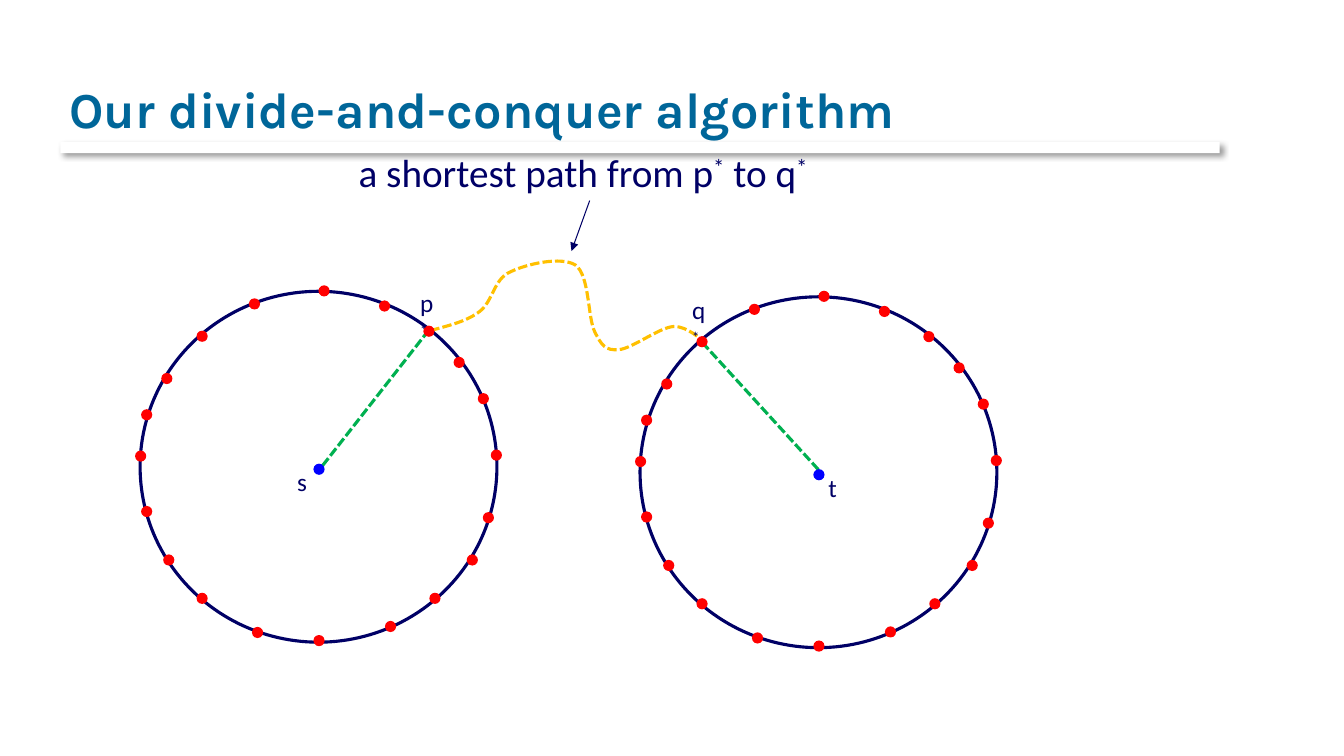
import pptx
import pptx.util
import pptx.dml.color
import pptx.enum.dml
import pptx.enum.shapes
import pptx.enum.text
import pptx.oxml
import pptx.oxml.ns

Pt = pptx.util.Pt
RGBColor = pptx.dml.color.RGBColor
NAVY = RGBColor(0x00, 0x00, 0x66)
TEAL = RGBColor(0x00, 0x66, 0x99)
RED = RGBColor(0xFF, 0x00, 0x00)
BLUE = RGBColor(0x00, 0x00, 0xFF)
GREEN = RGBColor(0x00, 0xB0, 0x50)
AMBER = RGBColor(0xFF, 0xC0, 0x00)
WHITE = RGBColor(0xFF, 0xFF, 0xFF)
DASH = pptx.enum.dml.MSO_LINE.SQUARE_DOT
OVAL = pptx.enum.shapes.MSO_SHAPE.OVAL
NAMESPACE = pptx.oxml.ns.nsdecls("a")
DOT_SIZE = 8

presentation = pptx.Presentation()
presentation.slide_width = Pt(960)
presentation.slide_height = Pt(540)
slide = presentation.slides.add_slide(presentation.slide_layouts[6])
shapes = slide.shapes


def add_line(start, end, color, width):
    line = shapes.add_connector(
        pptx.enum.shapes.MSO_CONNECTOR.STRAIGHT, *map(Pt, start + end)
    )
    line.line.color.rgb = color
    line.line.width = Pt(width)
    line._element.spPr.append(pptx.oxml.parse_xml(f"<a:effectLst {NAMESPACE}/>"))
    return line


def add_filled(kind, left, top, width, height, color):
    shape = shapes.add_shape(kind, Pt(left), Pt(top), Pt(width), Pt(height))
    shape.shadow.inherit = False
    shape.fill.solid()
    shape.fill.fore_color.rgb = color
    shape.line.fill.background()
    return shape


rule = add_filled(pptx.enum.shapes.MSO_SHAPE.RECTANGLE, 43.2, 101.5, 828, 7.9, WHITE)
effects = rule._element.spPr.find(pptx.oxml.ns.qn("a:effectLst"))
effects.append(pptx.oxml.parse_xml(
    f'<a:outerShdw {NAMESPACE} blurRad="50800" dist="38100" dir="2700000" '
    'algn="tl" rotWithShape="0"><a:srgbClr val="000000"><a:alpha val="40000"/>'
    "</a:srgbClr></a:outerShdw>"
))

for start, end in [((230.4, 332.6), (303.8, 239)), ((584.6, 335.5), (501.8, 244.8))]:
    radius = add_line(start, end, GREEN, 2.25)
    radius.line.dash_style = DASH

path_points = [
    (307.4, 236.2),
    (320.4, 232.6), (333.4, 229.7), (342.7, 222.5),
    (352.1, 215.3), (352.8, 199.4), (364.3, 194.4),
    (375.8, 188.6), (401, 182.9), (411.1, 189.4),
    (421.2, 196.6), (419.8, 226.8), (424.8, 236.9),
    (429.8, 247), (432.7, 250.6), (442.1, 249.8),
    (451.4, 249.1), (470.9, 234), (481, 233.3),
    (491, 232.6), (502.6, 244.1), (502.6, 244.1),
]
path_emu = [(Pt(x), Pt(y)) for x, y in path_points]
builder = shapes.build_freeform(*path_emu[0])
builder.add_line_segments(path_emu[1:], close=False)
shortest_path = builder.convert_to_shape()
shortest_path.shadow.inherit = False
shortest_path.fill.background()
shortest_path.line.color.rgb = AMBER
shortest_path.line.width = Pt(2.25)
shortest_path.line.dash_style = DASH
segments = list(shortest_path._element.iter(pptx.oxml.ns.qn("a:lnTo")))
for index in range(0, len(segments), 3):
    curve = pptx.oxml.parse_xml(f"<a:cubicBezTo {NAMESPACE}/>")
    segments[index].addprevious(curve)
    for segment in segments[index:index + 3]:
        curve.append(segment[0])
        segment.getparent().remove(segment)

boundary_dots = [
    (227.5, 203.8), (270.7, 214.6), (302.4, 232.6), (324, 254.9), (341.3, 280.8),
    (350.6, 321.1), (344.9, 365.8), (333.4, 396), (306.7, 423.4), (275, 443.5),
    (223.9, 453.6), (180, 447.8), (140.4, 423.4), (116.6, 396), (100.8, 361.4),
    (96.5, 321.8), (100.8, 292.3), (115.2, 266.4), (140.4, 236.2), (177.8, 213.1),
]
for shift_x, shift_y in [(0, 0), (357.1, 3.9)]:
    circle = shapes.add_shape(
        OVAL, Pt(100.1 + shift_x), Pt(208.1 + shift_y), Pt(254.9), Pt(250.6)
    )
    circle.shadow.inherit = False
    circle.fill.background()
    circle.line.color.rgb = NAVY
    circle.line.width = Pt(2.25)
    for x, y in boundary_dots:
        add_filled(OVAL, x + shift_x, y + shift_y, DOT_SIZE, DOT_SIZE, RED)
    add_filled(OVAL, 223.9 + shift_x, 331.2 + shift_y, DOT_SIZE, DOT_SIZE, BLUE)

title = shapes.add_textbox(Pt(42.5), Pt(12.2), Pt(815.8), Pt(90))
title.text_frame.word_wrap = True
title.text_frame.vertical_anchor = pptx.enum.text.MSO_ANCHOR.BOTTOM
paragraph = title.text_frame.paragraphs[0]
run = paragraph.add_run()
run.text = "Our divide-and-conquer algorithm"
run._r.get_or_add_rPr().set("spc", "10")
paragraph.font.name = "Karla"
paragraph.font.size = Pt(36)
paragraph.font.bold = True
paragraph.font.color.rgb = TEAL

labels = [
    (205.2, 329.8, 21.6, 28.8, 18, ["s"]),
    (584.6, 334.1, 20.9, 28.8, 18, ["t"]),
    (293, 201.6, 28.8, 28.8, 18, ["p", "*"]),
    (487.4, 206.6, 28.8, 28.8, 18, ["q", "*"]),
    (249.1, 102.2, 343.4, 41, 28, ["a shortest path from p", "*", " to q", "*"]),
]
for left, top, width, height, size, parts in labels:
    label = shapes.add_textbox(Pt(left), Pt(top), Pt(width), Pt(height))
    label.text_frame.word_wrap = False
    label.text_frame.auto_size = pptx.enum.text.MSO_AUTO_SIZE.SHAPE_TO_FIT_TEXT
    paragraph = label.text_frame.paragraphs[0]
    paragraph.font.name = "Calibri"
    paragraph.font.size = Pt(size)
    paragraph.font.color.rgb = NAVY
    for part in parts:
        run = paragraph.add_run()
        run.text = part
        if part == "*":
            run._r.get_or_add_rPr().set("baseline", "30000")

pointer = add_line((421.2, 143.3), (408.2, 179.3), NAVY, 0.75)
pointer.line._get_or_add_ln().append(
    pptx.oxml.parse_xml(f'<a:tailEnd {NAMESPACE} type="triangle"/>')
)

presentation.save("out.pptx")
